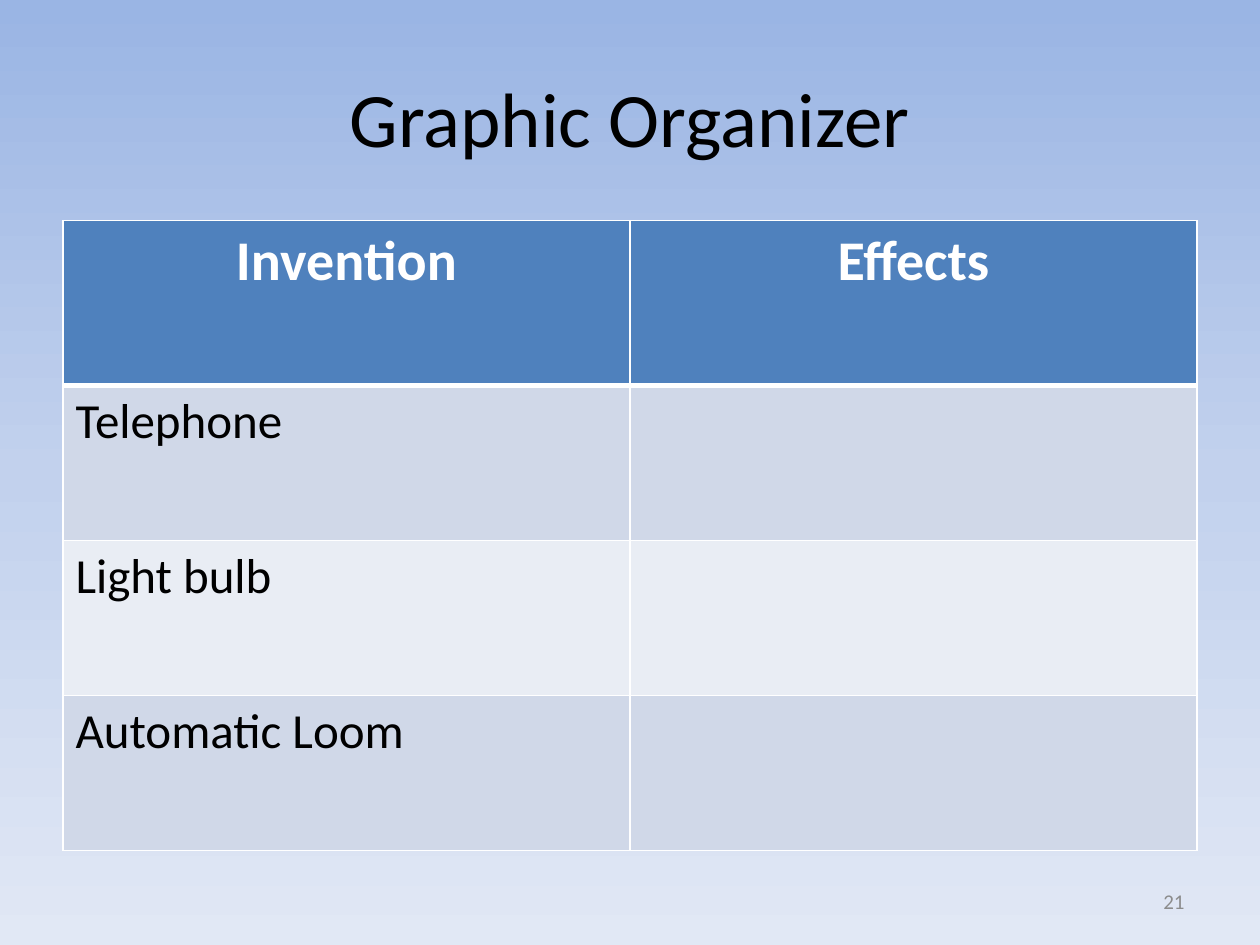
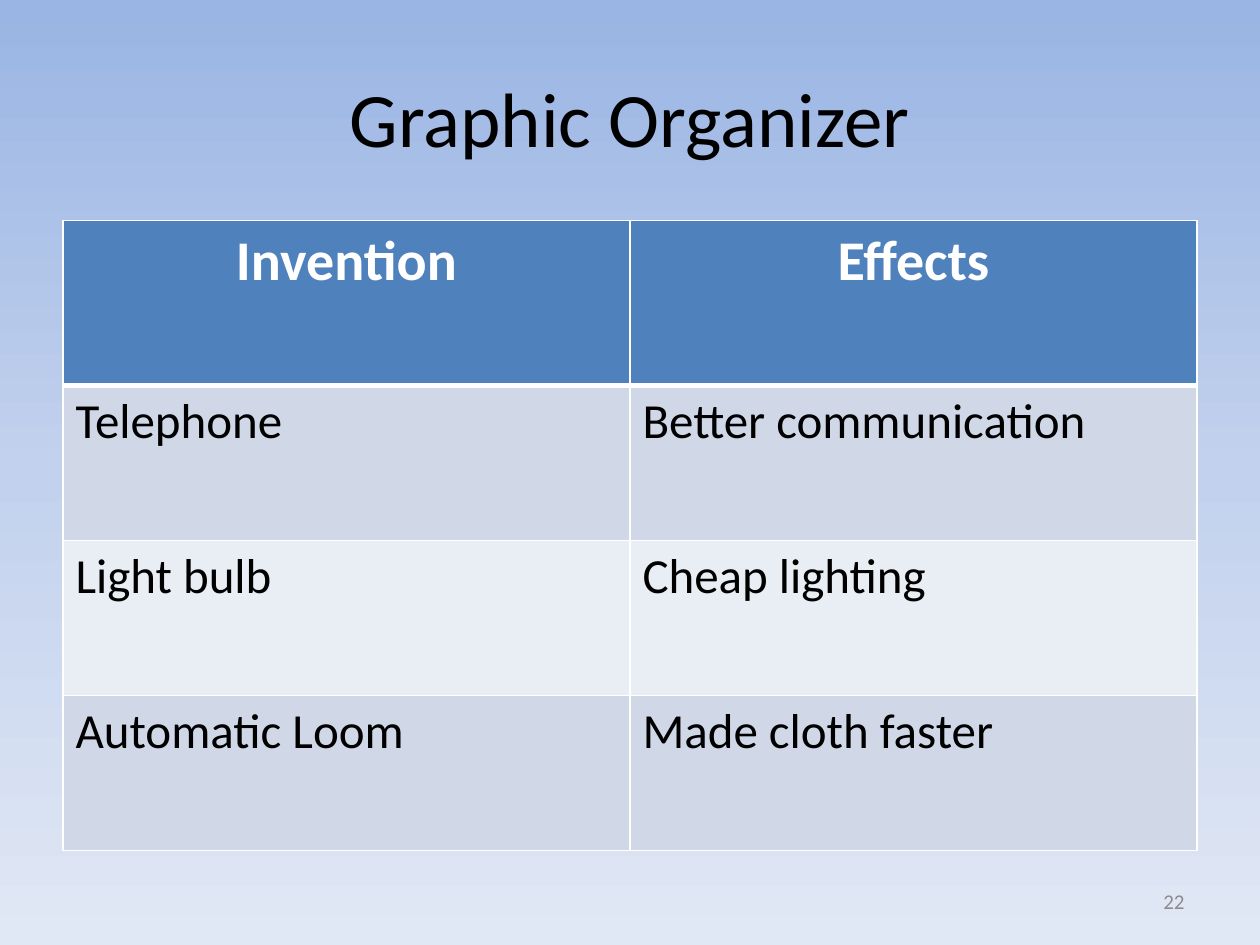
from copy import deepcopy

from lxml import etree
from pptx import Presentation
from pptx.dml.color import RGBColor
from pptx.enum.text import MSO_ANCHOR, PP_ALIGN
from pptx.oxml.ns import qn
from pptx.util import Inches, Pt

LEFT, CENTER, RIGHT = PP_ALIGN.LEFT, PP_ALIGN.CENTER, PP_ALIGN.RIGHT
MIDDLE = MSO_ANCHOR.MIDDLE

HEADERS = ("Invention", "Effects")
INVENTIONS = ("Telephone", "Light bulb", "Automatic Loom")
EFFECTS = ("Better communication", "Cheap lighting", "Made cloth faster")


def rgb(color):
    return RGBColor.from_string(color)


class Deck:
    FONT = "Calibri"
    BLACK, WHITE, GRAY = "000000", "FFFFFF", "8C8C8C"
    HEADER_FILL = "4F81BD"
    BANDS = ("D0D8E8", "E9EDF4")
    GRADIENT = ((0, "9AB5E4"), (0.5, "C2D1ED"), (1, "E1E8F5"))

    def __init__(self):
        self.prs = Presentation()
        self.prs.slide_width, self.prs.slide_height = Inches(10), Inches(7.5)
        self.s = None

    def add_slide(self):
        self.s = self.prs.slides.add_slide(self.prs.slide_layouts[6])
        fill = self.s.background.fill
        fill.gradient()
        fill.gradient_angle = 270
        # The default gradient has two stops; add the third
        stops = self.s.element.find(".//" + qn("a:gsLst"))
        stops.append(deepcopy(stops[-1]))
        for stop, (position, color) in zip(fill.gradient_stops, self.GRADIENT):
            stop.position = position
            stop.color.rgb = rgb(color)

    def set_text(self, tf, text, size, color, align, bold=False):
        tf.text = text
        p = tf.paragraphs[0]
        p.alignment = align
        for font in [p.font] + [r.font for r in p.runs]:
            font.name, font.size, font.bold = self.FONT, Pt(size), bold
            font.color.rgb = rgb(color)

    def text(self, text, left, top, width, height, size, color, align):
        box = self.s.shapes.add_textbox(
            Inches(left), Inches(top), Inches(width), Inches(height))
        tf = box.text_frame
        tf.word_wrap = True
        tf.vertical_anchor = MIDDLE
        self.set_text(tf, text, size, color, align)

    def title(self, text):
        self.text(text, 0.5, 0.3, 9, 1.25, 44, self.BLACK, CENTER)

    def page_number(self, number):
        self.text(str(number), 7.17, 6.95, 2.33, 0.4, 12, self.GRAY, RIGHT)

    def border(self, cell, side, width):
        tc_pr = cell._tc.get_or_add_tcPr()
        line = etree.SubElement(tc_pr, qn("a:ln" + side), w=str(Pt(width)))
        fill = etree.SubElement(line, qn("a:solidFill"))
        etree.SubElement(fill, qn("a:srgbClr"), val=self.WHITE)

    def table(self, rows):
        table = self.s.shapes.add_table(
            len(rows), len(rows[0]),
            Inches(0.5), Inches(1.75), Inches(9), Inches(5)).table
        for i, row in enumerate(rows):
            header = i == 0
            table.rows[i].height = Inches(1.31 if header else 1.23)
            # A thick rule separates the header from the body
            widths = {"L": 1, "R": 1, "T": 3 if i == 1 else 1,
                      "B": 3 if header else 1}
            for j, text in enumerate(row):
                cell = table.cell(i, j)
                for side, width in widths.items():
                    self.border(cell, side, width)
                cell.fill.solid()
                cell.fill.fore_color.rgb = rgb(
                    self.HEADER_FILL if header else self.BANDS[(i - 1) % 2])
                if header:
                    self.set_text(cell.text_frame, text, 32, self.WHITE, CENTER, True)
                else:
                    self.set_text(cell.text_frame, text, 28, self.BLACK, LEFT)


def main():
    deck = Deck()
    # The blank organizer comes first, then the completed one
    blanks = ("",) * len(INVENTIONS)
    for number, effects in enumerate((blanks, EFFECTS), start=21):
        deck.add_slide()
        deck.title("Graphic Organizer")
        deck.table([HEADERS, *zip(INVENTIONS, effects)])
        deck.page_number(number)
    deck.prs.save("out.pptx")


if __name__ == "__main__":
    main()
